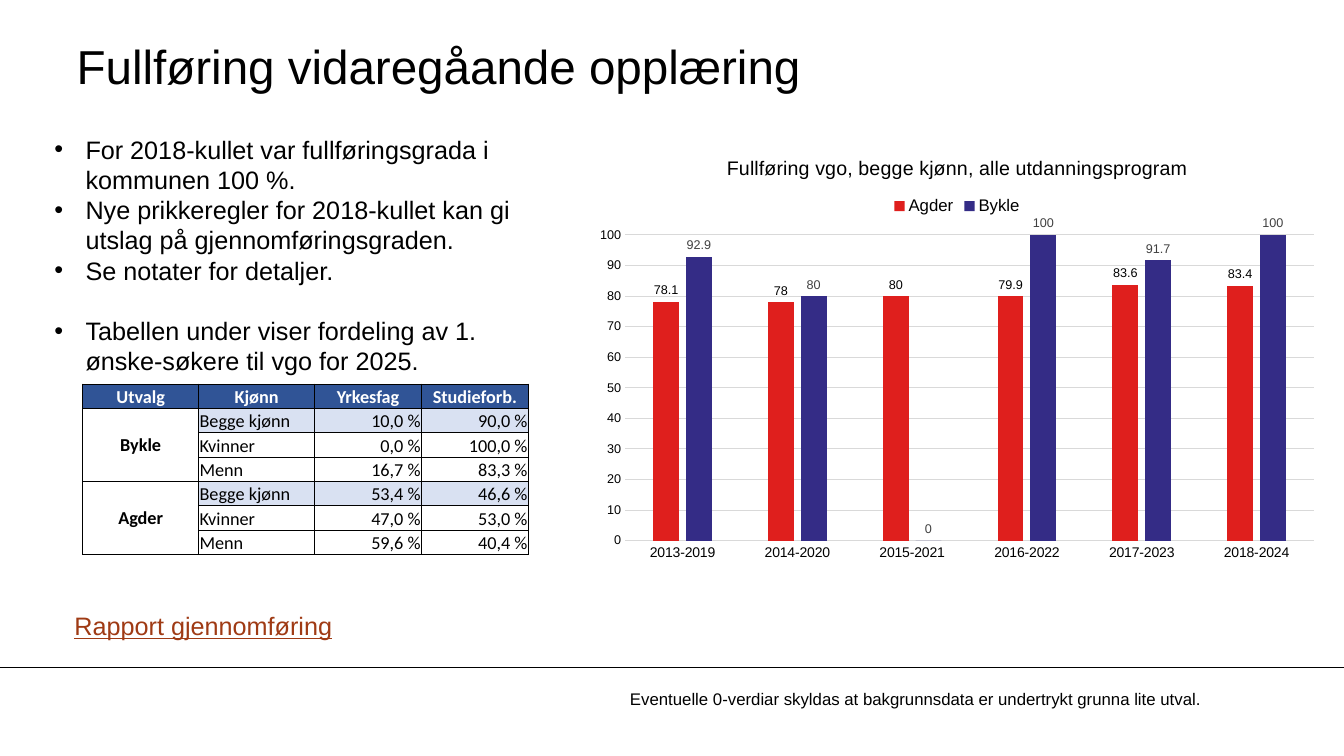
from lxml import etree
from pptx import Presentation
from pptx.chart.data import CategoryChartData
from pptx.dml.color import RGBColor
from pptx.enum.chart import XL_CHART_TYPE, XL_LABEL_POSITION, XL_LEGEND_POSITION, XL_TICK_MARK
from pptx.enum.shapes import MSO_CONNECTOR
from pptx.enum.text import MSO_ANCHOR, PP_ALIGN
from pptx.oxml.ns import qn
from pptx.util import Inches, Pt

COLUMN = XL_CHART_TYPE.COLUMN_CLUSTERED
OUTSIDE = XL_LABEL_POSITION.OUTSIDE_END
TOP = XL_LEGEND_POSITION.TOP
NO_TICK = XL_TICK_MARK.NONE
STRAIGHT = MSO_CONNECTOR.STRAIGHT
MIDDLE, BOTTOM = MSO_ANCHOR.MIDDLE, MSO_ANCHOR.BOTTOM
LEFT, CENTER, RIGHT = PP_ALIGN.LEFT, PP_ALIGN.CENTER, PP_ALIGN.RIGHT

BLACK = RGBColor(0x00, 0x00, 0x00)
WHITE = RGBColor(0xFF, 0xFF, 0xFF)
GRAY = RGBColor(0x40, 0x40, 0x40)
GRID = RGBColor(0xD9, 0xD9, 0xD9)
HEAD = RGBColor(0x30, 0x54, 0x96)
BAND = RGBColor(0xD9, 0xE1, 0xF2)
RED = RGBColor(0xDF, 0x1F, 0x1D)
NAVY = RGBColor(0x34, 0x2C, 0x86)
RUST = RGBColor(0x9F, 0x3A, 0x14)

POINTS = [
    "For 2018-kullet var fullføringsgrada i kommunen 100 %.",
    "Nye prikkeregler for 2018-kullet kan gi utslag på gjennomføringsgraden.",
    "Se notater for detaljer.",
    "Tabellen under viser fordeling av 1. ønske-søkere til vgo for 2025.",
]
ROWS = [
    ("Utvalg", "Kjønn", "Yrkesfag", "Studieforb."),
    ("Bykle", "Begge kjønn", "10,0 %", "90,0 %"),
    ("", "Kvinner", "0,0 %", "100,0 %"),
    ("", "Menn", "16,7 %", "83,3 %"),
    ("Agder", "Begge kjønn", "53,4 %", "46,6 %"),
    ("", "Kvinner", "47,0 %", "53,0 %"),
    ("", "Menn", "59,6 %", "40,4 %"),
]
WIDTHS = (1.15, 1.15, 1.06, 1.06)
YEARS = [f"{year}-{year + 6}" for year in range(2013, 2019)]
SERIES = [
    ("Agder", (78.1, 78, 80, 79.9, 83.6, 83.4), RED, BLACK),
    ("Bykle", (92.9, 80, 0, 100, 91.7, 100), NAVY, GRAY),
]


def style(font, size, color=BLACK, name="Arial", bold=False):
    font.size, font.name, font.bold = Pt(size), name, bold
    font.color.rgb = color


def add_text(slide, box, text, size, color=BLACK):
    frame = slide.shapes.add_textbox(*map(Inches, box)).text_frame
    frame.word_wrap = True
    frame.text = text
    for para in frame.paragraphs:
        for run in para.runs:
            style(run.font, size, color)
    return frame


def add_title(slide, box):
    frame = add_text(slide, box, "Fullføring vidaregåande opplæring", 34)
    frame.margin_left = frame.margin_right = 0
    frame.margin_top = frame.margin_bottom = 0
    frame.vertical_anchor = MIDDLE


def add_points(slide, box):
    frame = add_text(slide, box, "\n".join(POINTS), 18)
    indent = Inches(0.31)
    for para in frame.paragraphs:
        props = para._p.get_or_add_pPr()
        props.set("marL", str(indent))
        props.set("indent", str(-indent))
        etree.SubElement(props, qn("a:buFont")).set("typeface", "Arial")
        etree.SubElement(props, qn("a:buChar")).set("char", "•")
    frame.paragraphs[-1].space_before = Pt(21.6)


def add_borders(cell):
    props = cell._tc.get_or_add_tcPr()
    for index, side in enumerate(("lnL", "lnR", "lnT", "lnB")):
        line = etree.Element(qn(f"a:{side}"), w=str(Pt(0.5)))
        fill = etree.SubElement(line, qn("a:solidFill"))
        etree.SubElement(fill, qn("a:srgbClr")).set("val", str(BLACK))
        props.insert(index, line)


def fill_cell(cell, text, row, col):
    head, group = row == 0, col == 0
    cell.fill.solid()
    if head:
        cell.fill.fore_color.rgb = HEAD
    else:
        banded = row % 3 == 1 and not group
        cell.fill.fore_color.rgb = BAND if banded else WHITE
    cell.margin_left = cell.margin_right = cell.margin_top = Inches(0.01)
    cell.margin_bottom = 0
    cell.vertical_anchor = MIDDLE if group and not head else BOTTOM
    cell.text = text
    para = cell.text_frame.paragraphs[0]
    para.alignment = CENTER if head or group else LEFT if col == 1 else RIGHT
    for run in para.runs:
        style(run.font, 13, WHITE if head else BLACK, "Calibri", head or group)
    add_borders(cell)


def add_grid(slide, box):
    """Add the table of applicants by group and gender."""
    table = slide.shapes.add_table(len(ROWS), len(WIDTHS), *map(Inches, box)).table
    for column, width in zip(table.columns, WIDTHS):
        column.width = Inches(width)
    for top in (1, 4):
        table.cell(top, 0).merge(table.cell(top + 2, 0))
    for r, row in enumerate(ROWS):
        table.rows[r].height = Inches(box[3] / len(ROWS))
        for c, text in enumerate(row):
            fill_cell(table.cell(r, c), text, r, c)


def place(part, index, **spots):
    """Fix a chart part at fractions of the chart's size."""
    for old in part.findall(qn("c:layout")):
        part.remove(old)
    layout = etree.Element(qn("c:layout"))
    manual = etree.SubElement(layout, qn("c:manualLayout"))
    if "w" in spots:
        etree.SubElement(manual, qn("c:layoutTarget")).set("val", "inner")
    for key in ("x", "y"):
        etree.SubElement(manual, qn(f"c:{key}Mode")).set("val", "edge")
    for key, value in spots.items():
        etree.SubElement(manual, qn(f"c:{key}")).set("val", str(value))
    part.insert(index, layout)


def style_axes(chart):
    years, scale = chart.category_axis, chart.value_axis
    for axis, size in ((years, 10), (scale, 9)):
        axis.major_tick_mark = axis.minor_tick_mark = NO_TICK
        style(axis.tick_labels.font, size)
    scale.minimum_scale, scale.maximum_scale, scale.major_unit = 0, 100, 10
    scale.tick_labels.number_format = "#,##0"
    scale.tick_labels.number_format_is_linked = False
    scale.format.line.fill.background()
    for line in (years.format.line, scale.major_gridlines.format.line):
        line.color.rgb, line.width = GRID, Pt(0.75)


def add_bars(slide, box):
    data = CategoryChartData()
    data.categories = YEARS
    for name, values, _, _ in SERIES:
        data.add_series(name, values)
    chart = slide.shapes.add_chart(COLUMN, *map(Inches, box), data).chart
    style(chart.font, 10)
    frame = chart.chart_title.text_frame
    frame.text = "Fullføring vgo, begge kjønn, alle utdanningsprogram"
    style(frame.paragraphs[0].runs[0].font, 14)
    chart.has_legend = True
    chart.legend.position = TOP
    chart.legend.include_in_layout = False
    style(chart.legend.font, 12)
    style_axes(chart)
    plot = chart.plots[0]
    plot.gap_width, plot.overlap, plot.vary_by_categories = 219, -27, False
    for series, (_, _, color, ink) in zip(plot.series, SERIES):
        series.format.fill.solid()
        series.format.fill.fore_color.rgb = color
        labels = series.data_labels
        labels.show_value, labels.position = True, OUTSIDE
        style(labels.font, 9, ink)
    root = chart._chartSpace.chart
    place(root.plotArea, 0, x=0.053, y=0.227, w=0.927, h=0.709)
    place(root.find(qn("c:title")), 1, x=0.185, y=0.034)
    place(chart.legend._element, 1, x=0.408, y=0.13)


def add_footer(slide, top, width):
    ends = map(Inches, (0, top, width, top))
    rule = slide.shapes.add_connector(STRAIGHT, *ends)
    rule.line.color.rgb, rule.line.width = BLACK, Pt(0.75)
    etree.SubElement(rule._element.spPr, qn("a:effectLst"))
    note = "Eventuelle 0-verdiar skyldas at bakgrunnsdata er undertrykt grunna lite utval."
    add_text(slide, (6.15, top + 0.16, 5.94, 0.3), note, 12)


def main():
    deck = Presentation()
    deck.slide_width, deck.slide_height = Inches(13.33), Inches(7.5)
    slide = deck.slides.add_slide(deck.slide_layouts[6])
    add_footer(slide, 6.62, 13.33)
    add_title(slide, (0.76, 0.27, 11.1, 0.75))
    add_points(slide, (0.44, 1.28, 5.17, 2.52))
    add_grid(slide, (0.82, 3.81, 4.42, 1.69))
    link = add_text(slide, (0.64, 6.01, 2.81, 0.4), "Rapport gjennomføring", 18, RUST)
    link.paragraphs[0].runs[0].font.underline = True
    add_bars(slide, (5.81, 1.36, 7.37, 4.28))
    deck.save("out.pptx")


if __name__ == "__main__":
    main()
